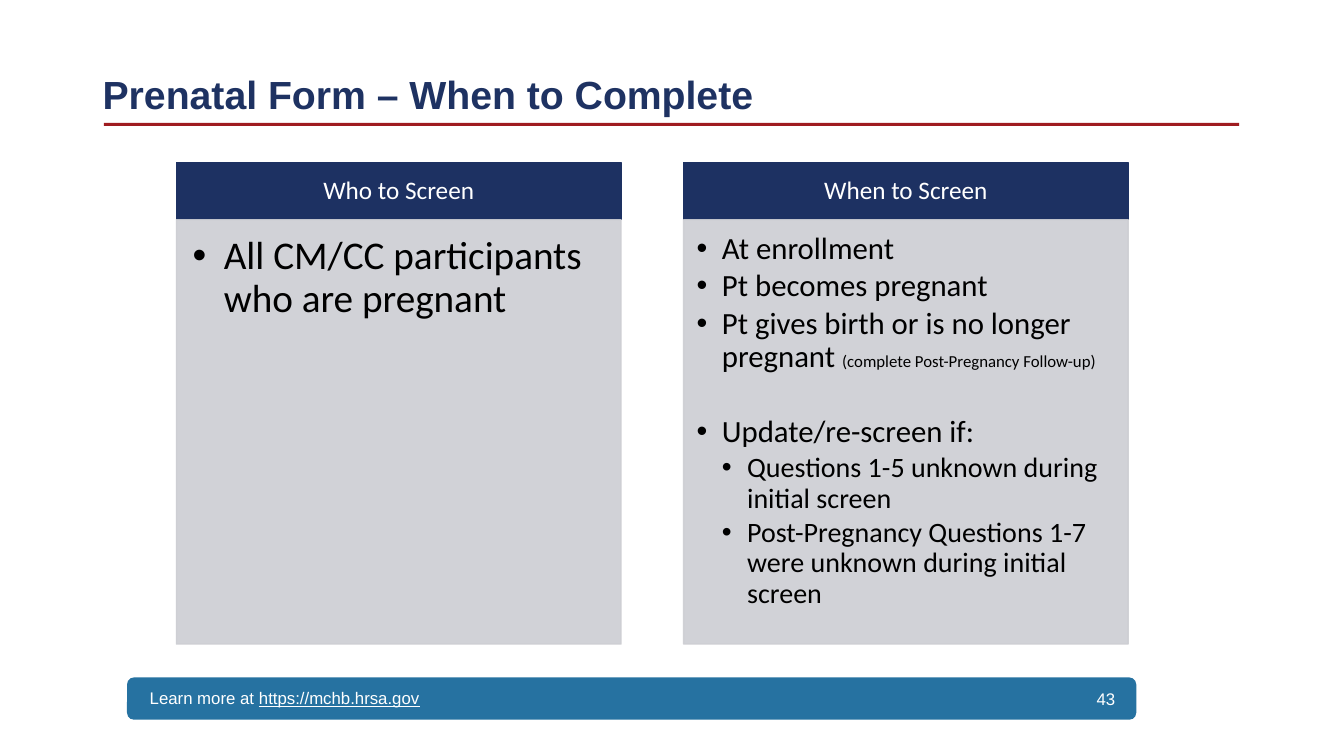
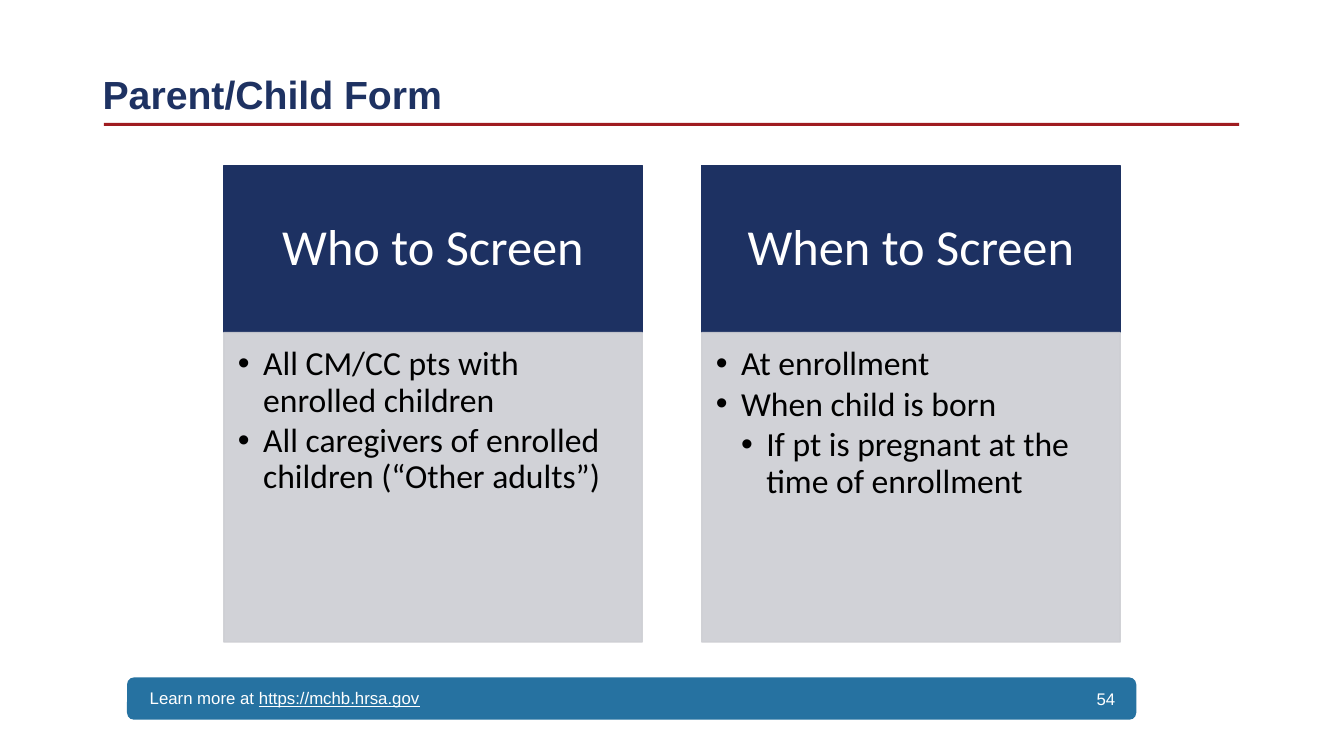
from pptx import Presentation
from pptx.dml.color import RGBColor
from pptx.enum.shapes import MSO_SHAPE as Shape
from pptx.enum.text import MSO_ANCHOR as Anchor, PP_ALIGN as Align
from pptx.oxml.ns import qn
from pptx.util import Pt
from lxml.etree import SubElement

PX = 9144  # 100 px to the inch

TITLE_NAVY = RGBColor(0x1E, 0x32, 0x62)
HEADER_NAVY = RGBColor(0x1D, 0x31, 0x62)
PANEL_GRAY = RGBColor(0xCD, 0xCE, 0xD3)
RULE_RED = RGBColor(0x9F, 0x1C, 0x20)
FOOTER_BLUE = RGBColor(0x26, 0x72, 0xA1)
WHITE = RGBColor(0xFF, 0xFF, 0xFF)
BLACK = RGBColor(0x00, 0x00, 0x00)

# Each bullet: level, size, space before, runs as (text, size)
SLIDES = [
    {
        "title": "Prenatal Form – When to Complete", "number": "43",
        "left": 175, "top": 161, "width": 441, "gap": 62,
        "header_height": 57, "body_height": 421, "header_size": 18,
        "panels": [
            ("Who to Screen", 31, [
                (0, 0, [("All CM/CC participants who are pregnant", 28)]),
            ]),
            ("When to Screen", 25, [
                (0, 0, [("At enrollment", 22)]),
                (0, 0, [("Pt becomes pregnant", 22)]),
                (0, 0, [("Pt gives birth or is no longer pregnant ", 22),
                        ("(complete Post-Pregnancy Follow-up)", 12)]),
                (0, 27, [("Update/re-screen if:", 22)]),
                (1, 0, [("Questions 1-5 unknown during initial screen", 20)]),
                (1, 0, [("Post-Pregnancy Questions 1-7 were unknown during initial screen", 20)]),
            ]),
        ],
    },
    {
        "title": "Parent/Child Form", "number": "54",
        "left": 222, "top": 164, "width": 415, "gap": 59,
        "header_height": 166, "body_height": 307, "header_size": 36,
        "panels": [
            ("Who to Screen", 25, [
                (0, 0, [("All CM/CC pts with enrolled children", 24)]),
                (0, 0, [("All caregivers of enrolled children (“Other adults”)", 24)]),
            ]),
            ("When to Screen", 25, [
                (0, 0, [("At enrollment", 24)]),
                (0, 0, [("When child is born", 24)]),
                (1, 0, [("If pt is pregnant at the time of enrollment", 24)]),
            ]),
        ],
    },
]


def add_block(page, kind, left, top, width, height, fill, line=None):
    block = page.shapes.add_shape(kind, left * PX, top * PX, width * PX, height * PX)
    block.shadow.inherit = False
    block.fill.solid()
    block.fill.fore_color.rgb = fill
    if line is None:
        block.line.fill.background()
    else:
        block.line.color.rgb = line
        block.line.width = Pt(1)
    return block


def add_text(page, left, top, width, height, texts, size, color, align, anchor, bold=False):
    box = page.shapes.add_textbox(left * PX, top * PX, width * PX, height * PX)
    frame = box.text_frame
    frame.word_wrap = True
    frame.vertical_anchor = anchor
    para = frame.paragraphs[0]
    para.alignment = align
    for text in texts:
        span = para.add_run()
        span.text = text
        span.font.name = "Arial"
        span.font.size = Pt(size)
        span.font.bold = bold
        span.font.color.rgb = color
    return para


deck = Presentation()
deck.slide_width = 1333 * PX
deck.slide_height = 750 * PX

for slide in SLIDES:
    page = deck.slides.add_slide(deck.slide_layouts[6])

    # Footer band, title rule and title
    add_block(page, Shape.ROUNDED_RECTANGLE, 126, 672, 1001, 42, FOOTER_BLUE)
    footer = add_text(page, 129, 672, 297, 40, ["Learn more at ", "https://mchb.hrsa.gov"],
                      12, WHITE, Align.RIGHT, Anchor.MIDDLE)
    footer.runs[1].font.underline = True
    add_block(page, Shape.RECTANGLE, 103, 122, 1126, 3, RULE_RED)
    title = add_text(page, 92, 20, 1150, 102, [slide["title"]],
                     28, TITLE_NAVY, Align.LEFT, Anchor.BOTTOM, bold=True)
    title.line_spacing = 0.9

    # Two panels, each a header over a bulleted body
    for column, (heading, indent, bullets) in enumerate(slide["panels"]):
        left = slide["left"] + column * (slide["width"] + slide["gap"])
        header = add_block(page, Shape.RECTANGLE, left, slide["top"], slide["width"],
                           slide["header_height"], HEADER_NAVY, HEADER_NAVY)
        header.text_frame.text = heading
        header.text_frame.vertical_anchor = Anchor.MIDDLE
        para = header.text_frame.paragraphs[0]
        para.alignment = Align.CENTER
        para.line_spacing = 0.9
        para.font.name = "Calibri"
        para.font.size = Pt(slide["header_size"])
        para.runs[0].font.name = "Calibri"
        para.runs[0].font.size = Pt(slide["header_size"])
        para.runs[0].font.color.rgb = WHITE

        body = add_block(page, Shape.RECTANGLE, left, slide["top"] + slide["header_height"],
                         slide["width"], slide["body_height"], PANEL_GRAY, PANEL_GRAY)
        # Fill and outline are 90% opaque
        for color in body.fill._xPr.iter(qn("a:srgbClr")):
            SubElement(color, qn("a:alpha"), val="90000")

        # Insets grow with the size of the first bullet
        frame = body.text_frame
        frame.word_wrap = True
        frame.vertical_anchor = Anchor.TOP
        lead_size = bullets[0][2][0][1]
        frame.margin_left = frame.margin_top = round(lead_size * 0.57) * PX
        frame.margin_right = round(lead_size * 0.78) * PX
        frame.margin_bottom = round(lead_size * 0.86) * PX

        for index, (level, space_before, spans) in enumerate(bullets):
            para = frame.paragraphs[0] if index == 0 else frame.add_paragraph()
            para.level = level
            para.alignment = Align.LEFT
            para.line_spacing = 0.9
            para.space_before = Pt(space_before)
            para.space_after = Pt(3)
            props = para._p.get_or_add_pPr()
            props.set("marL", str((level + 1) * indent * PX))
            props.set("indent", str(-indent * PX))
            SubElement(props, qn("a:buFont"), typeface="Arial")
            SubElement(props, qn("a:buChar"), char="•")
            for text, size in spans:
                span = para.add_run()
                span.text = text
                span.font.name = "Calibri"
                span.font.size = Pt(size)
                span.font.color.rgb = BLACK

    # Slide number
    add_text(page, 1065, 673, 51, 40, [slide["number"]],
             12, WHITE, Align.RIGHT, Anchor.MIDDLE)

deck.save("out.pptx")
